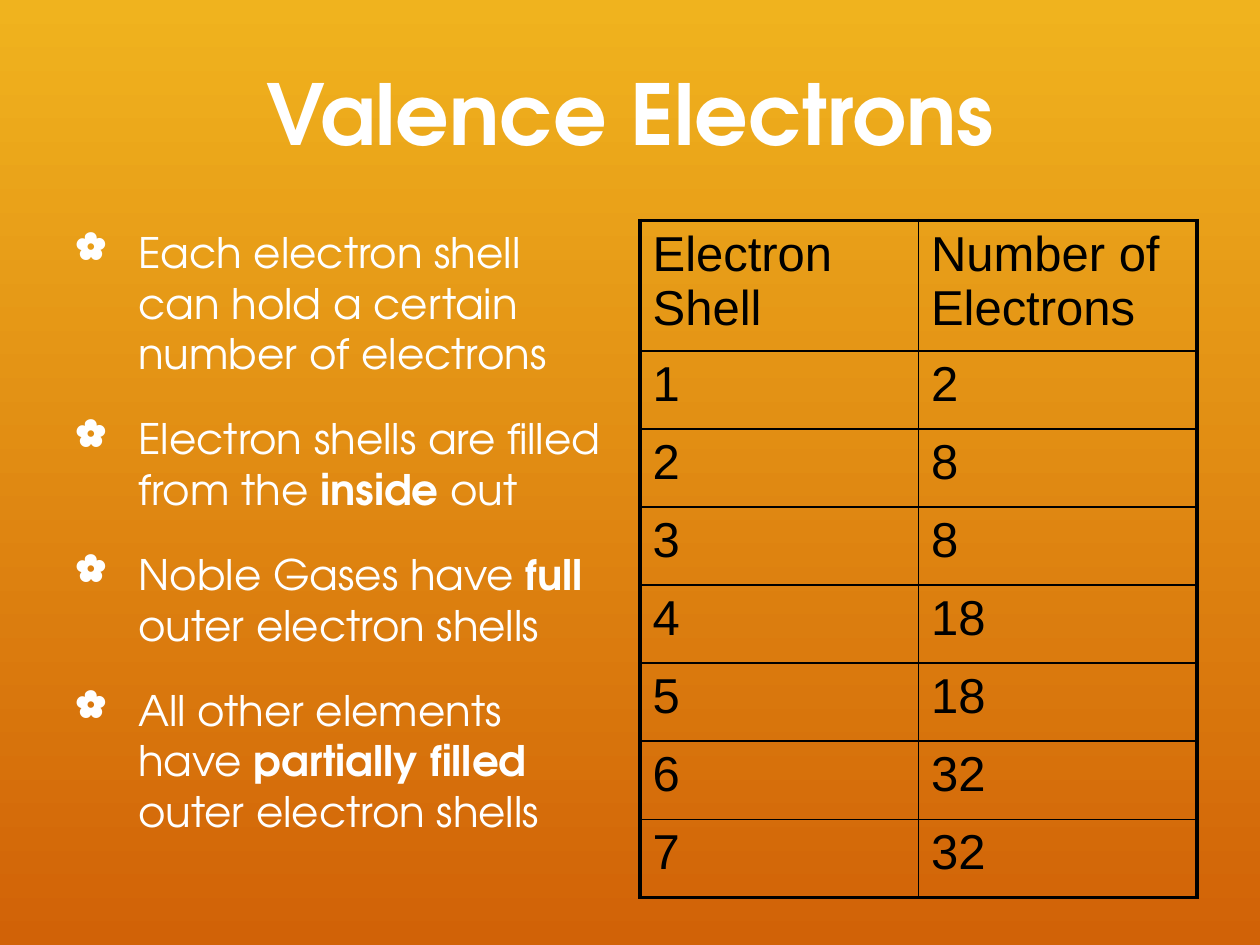
from lxml import etree
from pptx import Presentation
from pptx import util as u
from pptx.dml.color import RGBColor
from pptx.enum import text
from pptx.oxml.ns import qn

THEME = {
    "sky": RGBColor.from_string("F0B31E"),
    "ember": RGBColor.from_string("D16207"),
    "title": {"name": "TeX Gyre Adventor", "size": u.Pt(48), "bold": True},
    "body": {"name": "TeX Gyre Adventor", "size": u.Pt(24)},
    "table": {"name": "Arial", "size": u.Pt(28)},
    "light": RGBColor.from_string("FFFFFF"),
    "dark": RGBColor.from_string("000000"),
    "outer_line": u.Pt(2.25),
    "inner_line": u.Pt(1),
}


def write(paragraph, runs, style, color):
    """Add (wording, emphasised) runs in one theme style."""
    for wording, strong in runs:
        run = paragraph.add_run()
        run.text = wording
        formats = {"bold": strong, **THEME[style]}
        for key, value in formats.items():
            setattr(run.font, key, value)
        run.font.color.rgb = THEME[color]


def add_element(parent, tag, **attributes):
    return etree.SubElement(parent, qn(tag), attributes)


deck = Presentation()
deck.slide_width, deck.slide_height = u.Inches(10), u.Inches(7.5)
slide = deck.slides.add_slide(deck.slide_layouts[6])

backdrop = slide.background.fill
backdrop.gradient()
backdrop.gradient_angle = 270
for stop, name in zip(backdrop.gradient_stops, ("sky", "ember")):
    stop.color.rgb = THEME[name]

# Two equal columns between the side margins
margin = u.Inches(0.5)
gutter = u.Inches(0.16)
full_width = deck.slide_width - 2 * margin
column = (full_width - gutter) // 2
content_top = u.Inches(1.75)

heading = slide.shapes.add_textbox(margin, u.Inches(0.3), full_width, u.Inches(1.25)).text_frame
heading.word_wrap = True
heading.vertical_anchor = text.MSO_ANCHOR.MIDDLE
heading_line = heading.paragraphs[0]
heading_line.alignment = text.PP_ALIGN.CENTER
heading_line.line_spacing = 0.95
write(heading_line, [("Valence Electrons", True)], "title", "light")

facts = [
    [("Each electron shell can hold a certain number of electrons", False)],
    [("Electron shells are filled from the ", False), ("inside", True), (" out", False)],
    [("Noble Gases have ", False), ("full ", True), ("outer electron shells", False)],
    [("All other elements have ", False), ("partially filled", True),
     (" outer electron shells", False)],
]
fact_list = slide.shapes.add_textbox(margin, content_top, column, u.Inches(4.95)).text_frame
fact_list.word_wrap = True
for number, fact in enumerate(facts):
    item = fact_list.add_paragraph() if number else fact_list.paragraphs[0]
    properties = item._p.get_or_add_pPr()
    properties.set("marL", str(u.Inches(0.5)))
    properties.set("indent", str(-u.Inches(0.5)))
    add_element(properties, "a:buSzPct", val="90000")
    add_element(properties, "a:buChar", char="✿")
    if number:
        item.space_before = u.Pt(20)
    write(item, fact, "body", "light")

shells = [("Electron Shell", "Number of Electrons")]
shells += [(str(shell), str(count)) for shell, count in enumerate((2, 8, 8, 18, 18, 32, 32), 1)]
last_row, last_column = len(shells) - 1, len(shells[0]) - 1
shell_table = slide.shapes.add_table(
    len(shells), len(shells[0]), margin + column + gutter, content_top, column, u.Inches(5.36)
).table
shell_table.first_row = shell_table.horz_banding = False
for row in shell_table.rows:
    row.height = u.Inches(0.62)

for r, values in enumerate(shells):
    for c, value in enumerate(values):
        cell = shell_table.cell(r, c)
        write(cell.text_frame.paragraphs[0], [(value, False)], "table", "dark")
        on_edge = {"a:lnL": c == 0, "a:lnR": c == last_column,
                   "a:lnT": r == 0, "a:lnB": r == last_row}
        borders = cell._tc.get_or_add_tcPr()
        for side, outer in on_edge.items():
            width = THEME["outer_line" if outer else "inner_line"]
            line = add_element(borders, side, w=str(width))
            add_element(add_element(line, "a:solidFill"), "a:srgbClr", val=str(THEME["dark"]))
        add_element(borders, "a:noFill")

deck.save("out.pptx")
